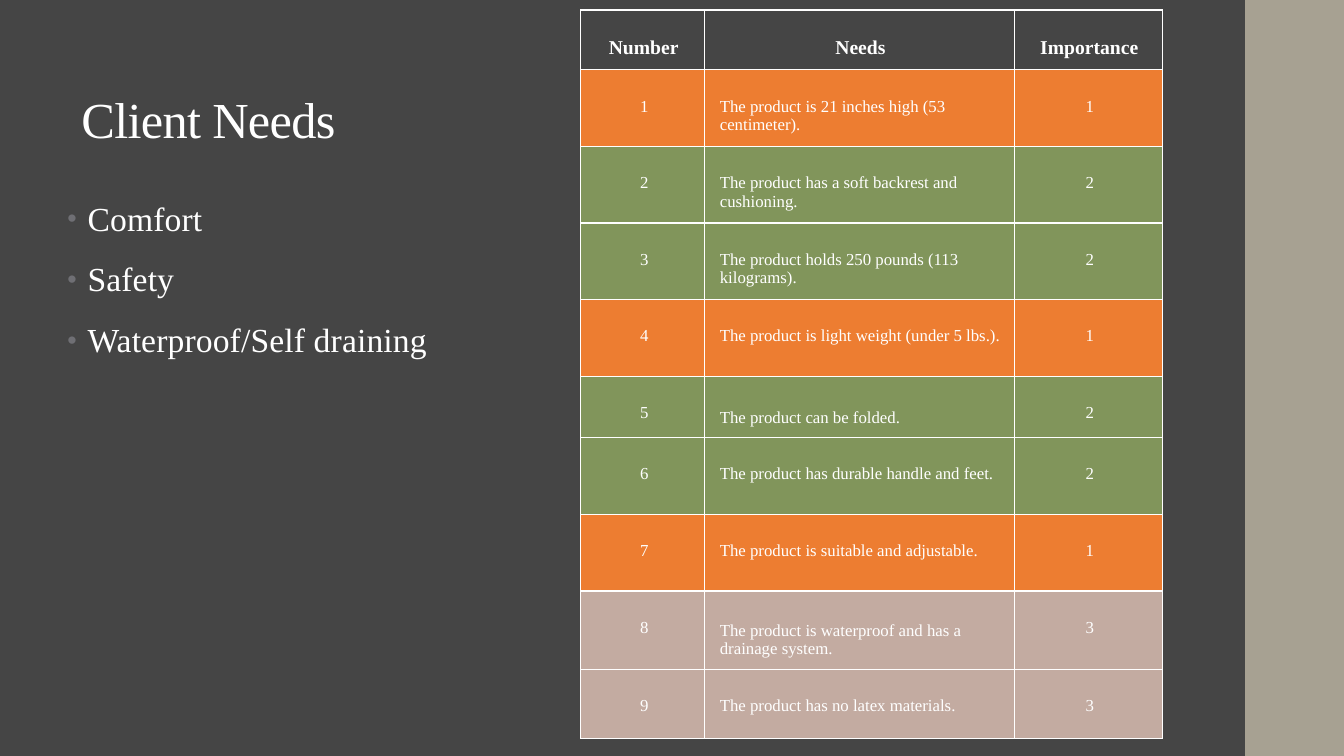
from dataclasses import dataclass

from pptx import Presentation
from pptx import util as u
from pptx.dml import color
from pptx.enum import shapes, text
from pptx.oxml import ns
from lxml import etree


@dataclass(frozen=True)
class Theme:
    font: str = "Times New Roman"
    back: str = "454545"
    side: str = "A7A192"
    ink: str = "FFFFFF"
    dot: str = "6F6F74"
    title: int = 36
    list: int = 24
    head: int = 14
    cell: int = 12


@dataclass(frozen=True)
class Need:
    words: str
    rank: int
    high: float = 0.76
    drop: float = 0.27


theme = Theme()
tints = {1: "ED7D31", 2: "81955B", 3: "C3ABA1"}
goals = ["Comfort", "Safety", "Waterproof/Self draining"]
heads = ["Number", "Needs", "Importance"]
widths = [1.23, 3.07, 1.47]
needs = [
    Need("The product is 21 inches high (53 centimeter).", 1),
    Need("The product has a soft backrest and cushioning.", 2),
    Need("The product holds 250 pounds (113 kilograms).", 2),
    Need("The product is light weight (under 5 lbs.).", 1),
    Need("The product can be folded.", 2, high=0.61, drop=0.32),
    Need("The product has durable handle and feet.", 2),
    Need("The product is suitable and adjustable.", 1),
    Need("The product is waterproof and has a drainage system.", 3, drop=0.3),
    Need("The product has no latex materials.", 3, high=0.68),
]


def rgb(tint: str) -> color.RGBColor:
    return color.RGBColor.from_string(tint)


def put(item, **vals) -> None:
    for name, val in vals.items():
        setattr(item, name, val)


def paint(fill, tint: str) -> None:
    fill.solid()
    fill.fore_color.rgb = rgb(tint)


def node(root, tag: str, **vals):
    return etree.SubElement(root, ns.qn(tag), {k: str(v) for k, v in vals.items()})


def write(para, words: str, size: int, bold: bool = False, track: int = 0) -> None:
    run = para.add_run()
    run.text = words
    put(run.font, name=theme.font, size=u.Pt(size), bold=bold)
    run.font.color.rgb = rgb(theme.ink)
    if track:
        run.font._element.set("spc", str(track))


def frame(slide, left: float, top: float, width: float, high: float, anchor):
    box = slide.shapes.add_textbox(*map(u.Inches, (left, top, width, high)))
    put(box.text_frame, word_wrap=True, vertical_anchor=anchor)
    return box.text_frame


def bullet(para) -> None:
    props = para._p.get_or_add_pPr()
    put(para, line_spacing=0.95, space_before=u.Pt(14), space_after=u.Pt(2))
    for key, val in {"marL": 0.2, "indent": -0.2}.items():
        props.set(key, str(u.Inches(val)))
    node(node(props, "a:buClr"), "a:srgbClr", val=theme.dot)
    node(props, "a:buSzPct", val=80000)
    node(props, "a:buFont", typeface="Arial")
    node(props, "a:buChar", char="•")


def edge(cell) -> None:
    props = cell._tc.get_or_add_tcPr()
    for tag in ("a:lnL", "a:lnR", "a:lnT", "a:lnB"):
        line = node(props, tag, w=u.Pt(1))
        node(node(line, "a:solidFill"), "a:srgbClr", val=theme.ink)


def fill(cell, words: str, size: int, drop: float, foot: float, mid: bool,
         tint: str = "", bold: bool = False) -> None:
    edge(cell)
    if tint:
        paint(cell.fill, tint)
    else:
        cell.fill.background()
    put(cell, margin_left=u.Inches(0.15), margin_top=u.Inches(drop),
        margin_right=u.Inches(foot + 0.04 * mid), margin_bottom=u.Inches(foot))
    para = cell.text_frame.paragraphs[0]
    para.alignment = text.PP_ALIGN.CENTER if mid else text.PP_ALIGN.LEFT
    write(para, words, size, bold)


def grid(slide) -> None:
    highs = [0.58] + [need.high for need in needs]
    area = map(u.Inches, (5.76, 0.1, sum(widths), sum(highs)))
    table = slide.shapes.add_table(len(highs), len(widths), *area).table
    put(table, first_row=False, horz_banding=False)
    for col, width in zip(table.columns, widths):
        col.width = u.Inches(width)
    for row, high in zip(table.rows, highs):
        row.height = u.Inches(high)
    for col, head in enumerate(heads):
        fill(table.cell(0, col), head, theme.head, 0.27, 0.09, True, bold=True)
    for row, need in enumerate(needs, 1):
        for col, words in enumerate((str(row), need.words, str(need.rank))):
            mid = col != 1
            drop = 0.27 if mid else need.drop
            fill(table.cell(row, col), words, theme.cell, drop, 0.08, mid,
                 tints[need.rank])


def main() -> None:
    deck = Presentation()
    put(deck, slide_width=u.Inches(13.33), slide_height=u.Inches(7.5))
    slide = deck.slides.add_slide(deck.slide_layouts[6])
    paint(slide.background.fill, theme.back)

    side = slide.shapes.add_shape(shapes.MSO_SHAPE.RECTANGLE,
                                  *map(u.Inches, (12.35, 0, 0.98, 7.5)))
    side.shadow.inherit = False
    paint(side.fill, theme.side)
    side.line.fill.background()

    title = frame(slide, 0.71, 0.39, 4.44, 1.14, text.MSO_ANCHOR.BOTTOM)
    title.paragraphs[0].line_spacing = 0.9
    write(title.paragraphs[0], "Client Needs", theme.title, track=-50)

    body = frame(slide, 0.57, 1.94, 4.44, 3.67, text.MSO_ANCHOR.TOP)
    for spot, goal in enumerate(goals):
        para = body.add_paragraph() if spot else body.paragraphs[0]
        bullet(para)
        write(para, goal, theme.list, track=10)

    grid(slide)
    deck.save("out.pptx")


if __name__ == "__main__":
    main()
